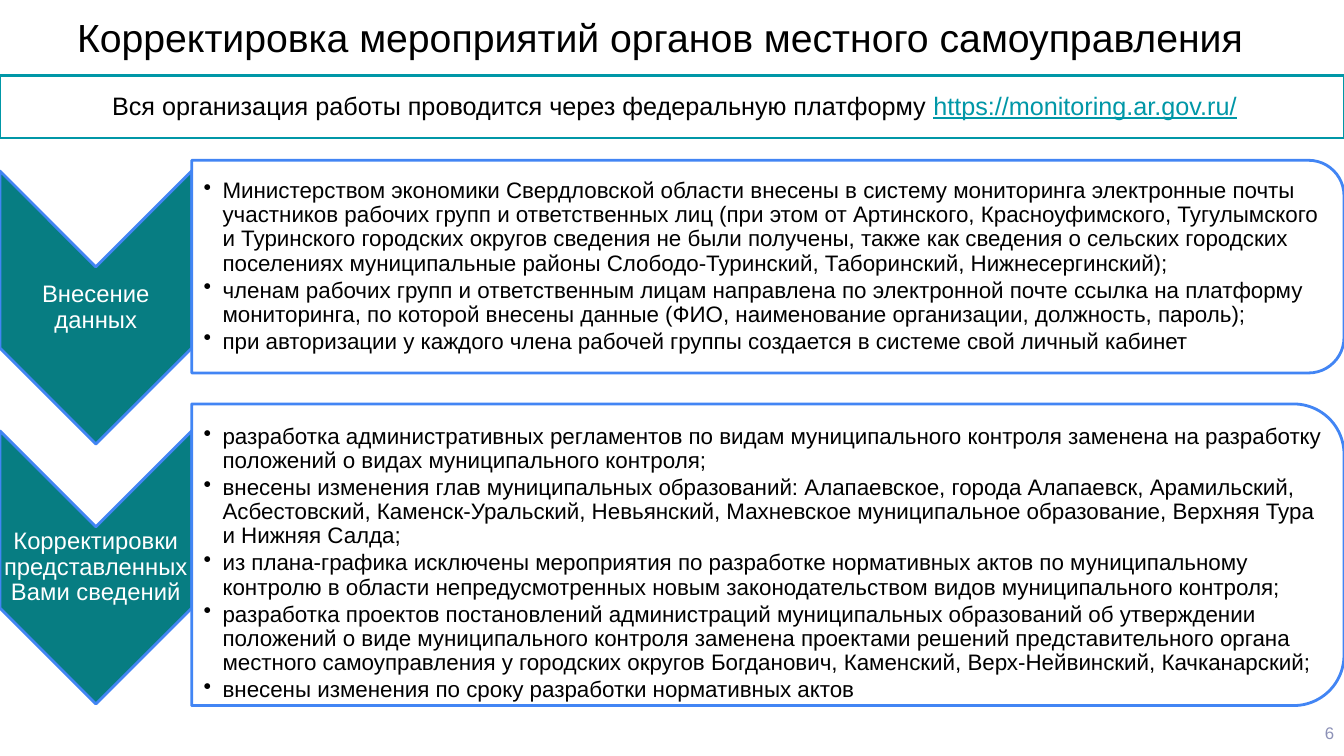
from lxml import etree
from pptx import Presentation
from pptx.dml.color import RGBColor
from pptx.enum import shapes, text
from pptx.oxml.ns import qn
from pptx.util import Cm, Pt

TITLE = "Корректировка мероприятий органов местного самоуправления "
PLATFORM = [
    ("Вся организация работы проводится через федеральную платформу ", "black", False),
    ("https://monitoring.ar.gov.ru/", "link", True),
    (" ", "black", False),
]
PAGE = "6"
# Centres and heights in cm; "push" moves the text down inside its panel
STAGES = [
    dict(
        label="Внесение данных",
        panel_middle=6.72, panel_height=5.36, text_width=28.78, text_height=4.85, push=0.03,
        points=[
            "Министерством экономики Свердловской области внесены в систему мониторинга электронные почты участников рабочих групп и ответственных лиц (при этом от Артинского, Красноуфимского, Тугулымского и Туринского городских округов сведения не были получены, также как сведения о сельских городских поселениях муниципальные районы Слободо-Туринский, Таборинский, Нижнесергинский);",
            "членам рабочих групп и ответственным лицам направлена по электронной почте ссылка на платформу мониторинга, по которой внесены данные (ФИО, наименование организации, должность, пароль);",
            "при авторизации у каждого члена рабочей группы создается в системе свой личный кабинет",
        ],
    ),
    dict(
        label="Корректировки представленных Вами сведений",
        panel_middle=13.98, panel_height=7.6, text_width=28.68, text_height=6.86, push=0.48,
        points=[
            "разработка административных регламентов по видам муниципального контроля заменена на разработку положений о видах муниципального контроля;",
            "внесены изменения глав муниципальных образований: Алапаевское, города Алапаевск, Арамильский, Асбестовский, Каменск-Уральский, Невьянский, Махневское муниципальное образование, Верхняя Тура и Нижняя Салда;",
            "из плана-графика исключены мероприятия по разработке нормативных актов по муниципальному контролю в области непредусмотренных новым законодательством видов муниципального контроля;",
            "разработка проектов постановлений администраций муниципальных образований об утверждении положений о виде муниципального контроля заменена проектами решений представительного органа местного самоуправления у городских округов Богданович, Каменский, Верх-Нейвинский, Качканарский;",
            "внесены изменения по сроку разработки нормативных актов",
        ],
    ),
]
COLORS = {"black": "000000", "white": "FFFFFF", "link": "0097A7", "chevron": "077D82",
          "outline": "4285F4", "page": "8C91B7"}
SLIDE_W, SLIDE_H = 33.87, 19.05
CHEVRON_W, CHEVRON_H = 4.83, 6.88
FIRST_CHEVRON_MIDDLE, CHEVRON_STEP = 7.75, 6.55
LABEL_H = 2.06
BULLET_INDENT = 0.48
LEFT, CENTER, RIGHT = text.PP_ALIGN.LEFT, text.PP_ALIGN.CENTER, text.PP_ALIGN.RIGHT
TOP, MIDDLE = text.MSO_ANCHOR.TOP, text.MSO_ANCHOR.MIDDLE

prs = Presentation()
prs.slide_width, prs.slide_height = Cm(SLIDE_W), Cm(SLIDE_H)
slide = prs.slides.add_slide(prs.slide_layouts[6])


def color(name):
    return RGBColor.from_string(COLORS[name])


def add_text(box, paragraphs, size, align, anchor=MIDDLE, insets=(0.25, 0.25, 0.25, 0.25),
             spacing=1.0, after=0, bullets=False):
    """Write paragraphs, each a list of (text, color, underline); insets run left, top, right, bottom in cm."""
    left, top, width, height = box
    frame = slide.shapes.add_textbox(Cm(left), Cm(top), Cm(width), Cm(height)).text_frame
    frame.word_wrap = True
    frame.vertical_anchor = anchor
    (frame.margin_left, frame.margin_top,
     frame.margin_right, frame.margin_bottom) = [Cm(inset) for inset in insets]
    for i, runs in enumerate(paragraphs):
        paragraph = frame.add_paragraph() if i else frame.paragraphs[0]
        paragraph.alignment = align
        paragraph.line_spacing = spacing
        paragraph.space_after = Pt(after)
        if bullets:
            props = paragraph._p.get_or_add_pPr()
            props.set("marL", str(Cm(BULLET_INDENT)))
            props.set("indent", str(-Cm(BULLET_INDENT)))
            etree.SubElement(props, qn("a:buChar")).set("char", "•")
        for words, tint, underline in runs:
            run = paragraph.add_run()
            run.text = words
            run.font.name = "Arial"
            run.font.size = Pt(size)
            run.font.color.rgb = color(tint)
            if underline:
                run.font.underline = True


def add_outlined(kind, box, fill, line, turned=True):
    """Draw a shape that covers box on the slide, turned a quarter clockwise if asked."""
    left, top, width, height = box
    if turned:
        left, top = left + (width - height) / 2, top + (height - width) / 2
        width, height = height, width
    shape = slide.shapes.add_shape(kind, Cm(left), Cm(top), Cm(width), Cm(height))
    shape.rotation = 90 if turned else 0
    shape.shadow.inherit = False
    shape.fill.solid()
    shape.fill.fore_color.rgb = color(fill)
    shape.line.color.rgb = color(line)
    shape.line.width = Pt(2)


add_text((0.99, 0, 31.55, 2.13), [[(TITLE, "black", False)]], 28, CENTER, TOP,
         insets=(0.25, 0.33, 0.25, 0.25))
banner = (0, 1.9, SLIDE_W, 1.58)
add_outlined(shapes.MSO_SHAPE.RECTANGLE, banner, "white", "link", turned=False)
add_text(banner, [PLATFORM], 18, CENTER, TOP, insets=(0.55, 0.25, 0.25, 0.25), spacing=1.15)
add_text((26.25, 17.96, 7.62, 1.02), [[(PAGE, "page", False)]], 12, RIGHT)

for i, stage in enumerate(STAGES):
    middle = FIRST_CHEVRON_MIDDLE + i * CHEVRON_STEP
    add_outlined(shapes.MSO_SHAPE.CHEVRON,
                 (0, middle - CHEVRON_H / 2, CHEVRON_W, CHEVRON_H), "chevron", "outline")
    add_text((0, middle - LABEL_H / 2, CHEVRON_W, LABEL_H), [[(stage["label"], "white", False)]],
             17, CENTER, insets=(0.03, 0.03, 0.03, 0.03), spacing=0.9)

    panel_middle, panel_height = stage["panel_middle"], stage["panel_height"]
    add_outlined(shapes.MSO_SHAPE.ROUND_2_SAME_RECTANGLE,
                 (CHEVRON_W, panel_middle - panel_height / 2, SLIDE_W - CHEVRON_W, panel_height),
                 "white", "outline")
    text_height = stage["text_height"]
    add_text((CHEVRON_W, panel_middle - text_height / 2, stage["text_width"], text_height),
             [[(point, "black", False)] for point in stage["points"]], 16, LEFT,
             insets=(0.3, stage["push"], 0.03, 0.03), spacing=0.9, after=2, bullets=True)

prs.save("out.pptx")
